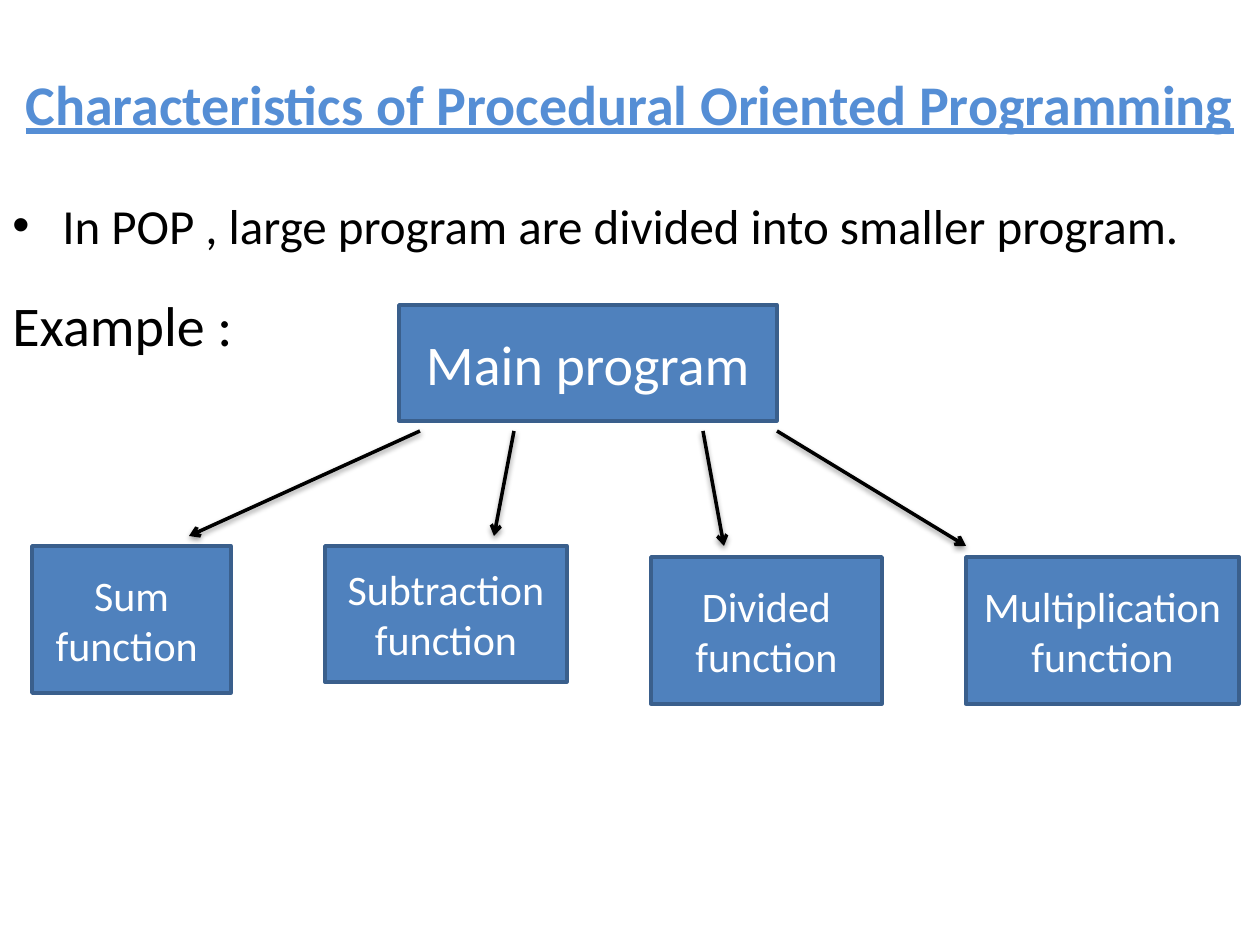
import pptx
import pptx.dml.color
import pptx.enum.shapes
import pptx.enum.text
import pptx.oxml
import pptx.oxml.ns
import pptx.util

PX = 914400 / 126
HUES = {"title": "558ED5", "text": "000000", "fill": "4F81BD", "edge": "3A5F8C", "light": "FFFFFF"}
ALIGN = pptx.enum.text.PP_ALIGN
ANCHOR = pptx.enum.text.MSO_ANCHOR
SHADOW = (
    '<a:effectLst %s><a:outerShdw blurRad="40000" dist="20000" dir="5400000" rotWithShape="0">'
    '<a:srgbClr val="000000"><a:alpha val="38000"/></a:srgbClr></a:outerShdw></a:effectLst>'
)


def emu(*sizes):
    return [pptx.util.Emu(round(size * PX)) for size in sizes]


def hue(name):
    return pptx.dml.color.RGBColor.from_string(HUES[name])


def node(xml):
    return pptx.oxml.parse_xml(xml % pptx.oxml.ns.nsdecls("a"))


class Deck:
    """Holds the style and the current slide, and draws each kind of element."""

    font = "Calibri"
    width = pptx.util.Pt(2)

    def __init__(self, wide, high):
        self.show = pptx.Presentation()
        self.show.slide_width, self.show.slide_height = emu(wide, high)
        self.slide = self.show.slides.add_slide(self.show.slide_layouts[6])

    def label(self, shape, words, size, color, align, anchor, **style):
        frame = shape.text_frame
        frame.word_wrap = True
        frame.vertical_anchor = anchor
        para = frame.paragraphs[0]
        para.alignment = align
        run = para.add_run()
        run.text = words
        form = {"name": self.font, "size": pptx.util.Pt(size), **style}
        for key, value in form.items():
            setattr(run.font, key, value)
        run.font.color.rgb = hue(color)
        return para

    def text(self, area, words, size, color="text", align=ALIGN.LEFT, **style):
        box = self.slide.shapes.add_textbox(*emu(*area))
        return self.label(box, words, size, color, align, ANCHOR.TOP, **style)

    def bullet(self, area, words, size, indent):
        props = self.text(area, words, size)._p.get_or_add_pPr()
        gap = emu(indent)[0]
        props.set("marL", str(gap))
        props.set("indent", str(-gap))
        props.append(node('<a:buFont %s typeface="Arial"/>'))
        props.append(node('<a:buChar %s char="•"/>'))

    def box(self, area, words, size):
        kind = pptx.enum.shapes.MSO_SHAPE.RECTANGLE
        shape = self.slide.shapes.add_shape(kind, *emu(*area))
        shape.shadow.inherit = False
        shape.fill.solid()
        shape.fill.fore_color.rgb = hue("fill")
        shape.line.color.rgb = hue("edge")
        shape.line.width = self.width
        self.label(shape, words, size, "light", ALIGN.CENTER, ANCHOR.MIDDLE)

    def arrow(self, start, end):
        kind = pptx.enum.shapes.MSO_CONNECTOR.STRAIGHT
        line = self.slide.shapes.add_connector(kind, *emu(*start, *end))
        line.line.color.rgb = hue("text")
        line.line.width = self.width
        props = line._element.spPr
        props.find(pptx.oxml.ns.qn("a:ln")).append(node('<a:tailEnd %s type="arrow"/>'))
        props.append(node(SHADOW))

    def save(self):
        self.show.save("out.pptx")


def main():
    deck = Deck(1260, 945)
    deck.text((0, 63, 1260, 81), "Characteristics of Procedural Oriented Programming", 32,
              "title", ALIGN.CENTER, bold=True, underline=True)
    deck.bullet((0, 189, 1260, 106), "In POP , large program are divided into smaller program.", 28, 50)
    deck.box((399, 305, 378, 116), "Main program", 32)
    parts = [
        ("Sum function ", (32, 546, 199, 147), 420, (189, 536)),
        ("Subtraction function", (325, 546, 242, 136), 514, (494, 536)),
        ("Divided function", (651, 557, 231, 147), 703, (724, 546)),
        ("Multiplication function", (966, 557, 273, 147), 777, (966, 546)),
    ]
    for words, area, _, _ in parts:
        deck.box(area, words, 24)
    for _, _, left, end in parts:
        deck.arrow((left, 431), end)
    deck.text((0, 284, 273, 81), "Example :", 32)
    deck.save()


if __name__ == "__main__":
    main()
